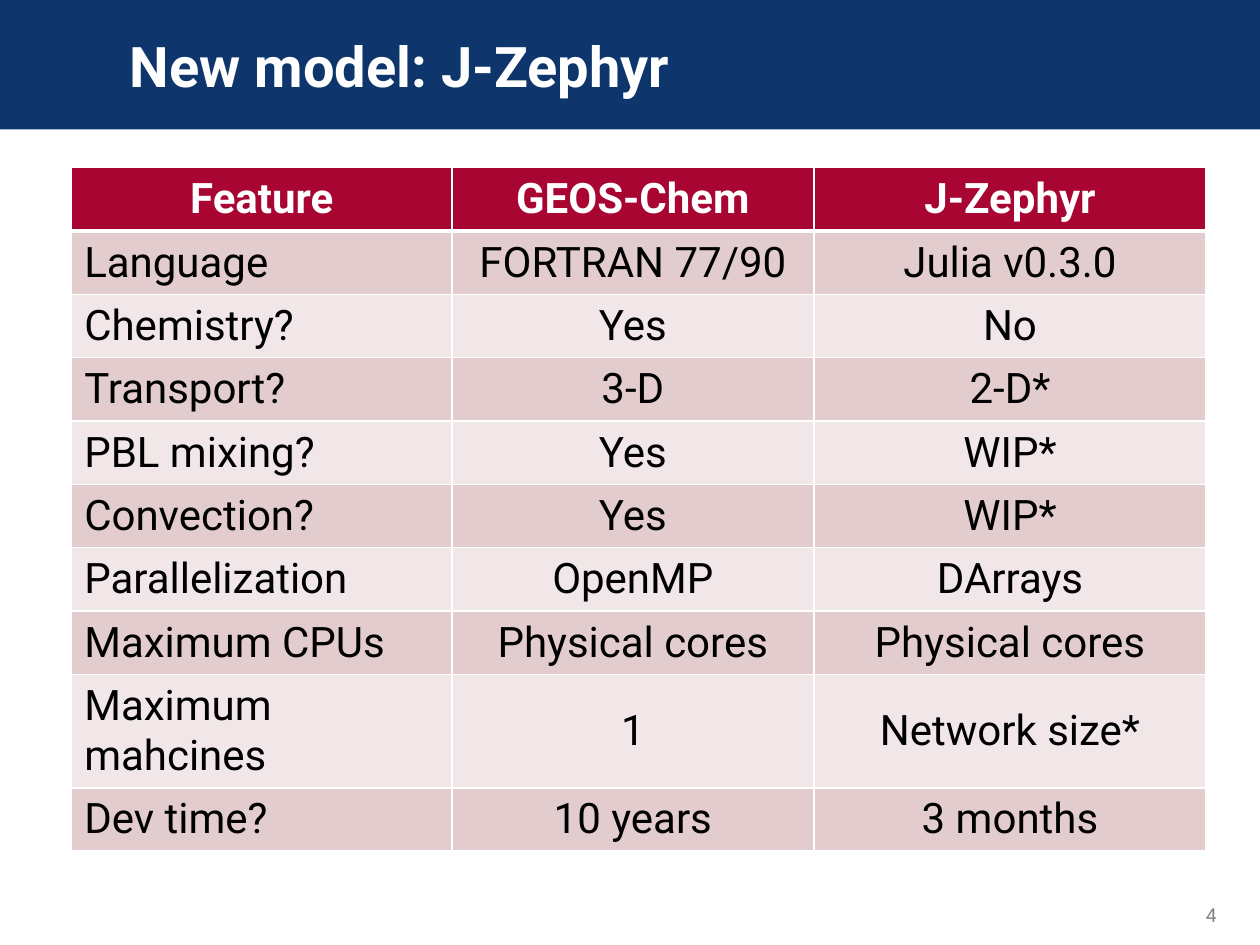
"""Build the slide that compares the GEOS-Chem and J-Zephyr models."""
from lxml import etree
from pptx import Presentation
from pptx.dml.color import RGBColor
from pptx.enum import shapes, text
from pptx.oxml import ns
from pptx.util import Pt

FONT = "Roboto"
COLORS = {
    "band": "0E366C",
    "header": "A90533",
    "odd": "E2CCCE",
    "even": "F1E7E8",
    "white": "FFFFFF",
    "black": "000000",
    "number": "808080",
}
COLUMN_WIDTHS = (217.2, 206.9, 224.2)
ROW_HEIGHT = 36.2
ROWS = (
    ("Feature", "GEOS-Chem", "J-Zephyr"),
    ("Language", "FORTRAN 77/90", "Julia v0.3.0"),
    ("Chemistry?", "Yes", "No"),
    ("Transport?", "3-D", "2-D*"),
    ("PBL mixing?", "Yes", "WIP*"),
    ("Convection?", "Yes", "WIP*"),
    ("Parallelization", "OpenMP", "DArrays"),
    ("Maximum CPUs", "Physical cores", "Physical cores"),
    ("Maximum mahcines", "1", "Network size*"),
    ("Dev time?", "10 years", "3 months"),
)


def rgb(name):
    return RGBColor.from_string(COLORS[name])


def write(tf, content, size, color, bold=False, align=text.PP_ALIGN.LEFT):
    tf.text = content
    p = tf.paragraphs[0]
    p.alignment = align
    font = p.runs[0].font
    font.name, font.size, font.bold = FONT, Pt(size), bold
    font.color.rgb = rgb(color)


def place(shape, left, top, width, height):
    shape.left, shape.top = Pt(left), Pt(top)
    shape.width, shape.height = Pt(width), Pt(height)


def add_title(s, content):
    title = s.shapes.title
    place(title, 67, 13, 638, 46.8)
    tf = title.text_frame
    write(tf, content, 32, "white", bold=True)
    tf.vertical_anchor = text.MSO_ANCHOR.BOTTOM
    tf.auto_size = text.MSO_AUTO_SIZE.NONE


def add_band(s):
    band = s.shapes.add_shape(shapes.MSO_SHAPE.RECTANGLE, 0, 0, Pt(720), Pt(74))
    band.shadow.inherit = False
    band.fill.solid()
    band.fill.fore_color.rgb = rgb("band")
    band.line.fill.background()
    s.shapes.title.element.addprevious(band.element)


def add_number(s, content):
    box = s.shapes.add_textbox(Pt(682), Pt(512.5), Pt(33), Pt(21))
    tf = box.text_frame
    tf.word_wrap = True
    write(tf, content, 11, "number")


def set_border(cell, side, width):
    tc_pr = cell._tc.get_or_add_tcPr()
    line = etree.SubElement(tc_pr, ns.qn(f"a:ln{side}"), w=str(Pt(width)))
    fill = etree.SubElement(line, ns.qn("a:solidFill"))
    etree.SubElement(fill, ns.qn("a:srgbClr"), val=COLORS["white"])


def format_cell(cell, content, row, column):
    header = row == 0
    centred = header or column > 0
    align = text.PP_ALIGN.CENTER if centred else text.PP_ALIGN.LEFT
    write(cell.text_frame, content, 24, "white" if header else "black", header, align)
    cell.vertical_anchor = text.MSO_ANCHOR.MIDDLE
    widths = {"L": 1, "R": 1, "T": 3 if row == 1 else 1, "B": 3 if header else 1}
    for side, width in widths.items():
        set_border(cell, side, width)
    cell.fill.solid()
    cell.fill.fore_color.rgb = rgb("header" if header else "odd" if row % 2 else "even")


def add_comparison(s):
    frame = s.shapes.add_table(
        len(ROWS), len(COLUMN_WIDTHS), Pt(41), Pt(95.8),
        Pt(sum(COLUMN_WIDTHS)), Pt(ROW_HEIGHT * len(ROWS)))
    table = frame.table
    for column, width in zip(table.columns, COLUMN_WIDTHS):
        column.width = Pt(width)
    for i, values in enumerate(ROWS):
        table.rows[i].height = Pt(ROW_HEIGHT)
        for j, value in enumerate(values):
            format_cell(table.cell(i, j), value, i, j)


def main():
    prs = Presentation()
    prs.slide_width, prs.slide_height = Pt(720), Pt(540)
    s = prs.slides.add_slide(prs.slide_layouts.get_by_name("Title Only"))
    add_title(s, "New model: J-Zephyr")
    add_band(s)
    add_number(s, "4")
    add_comparison(s)
    prs.save("out.pptx")


if __name__ == "__main__":
    main()
